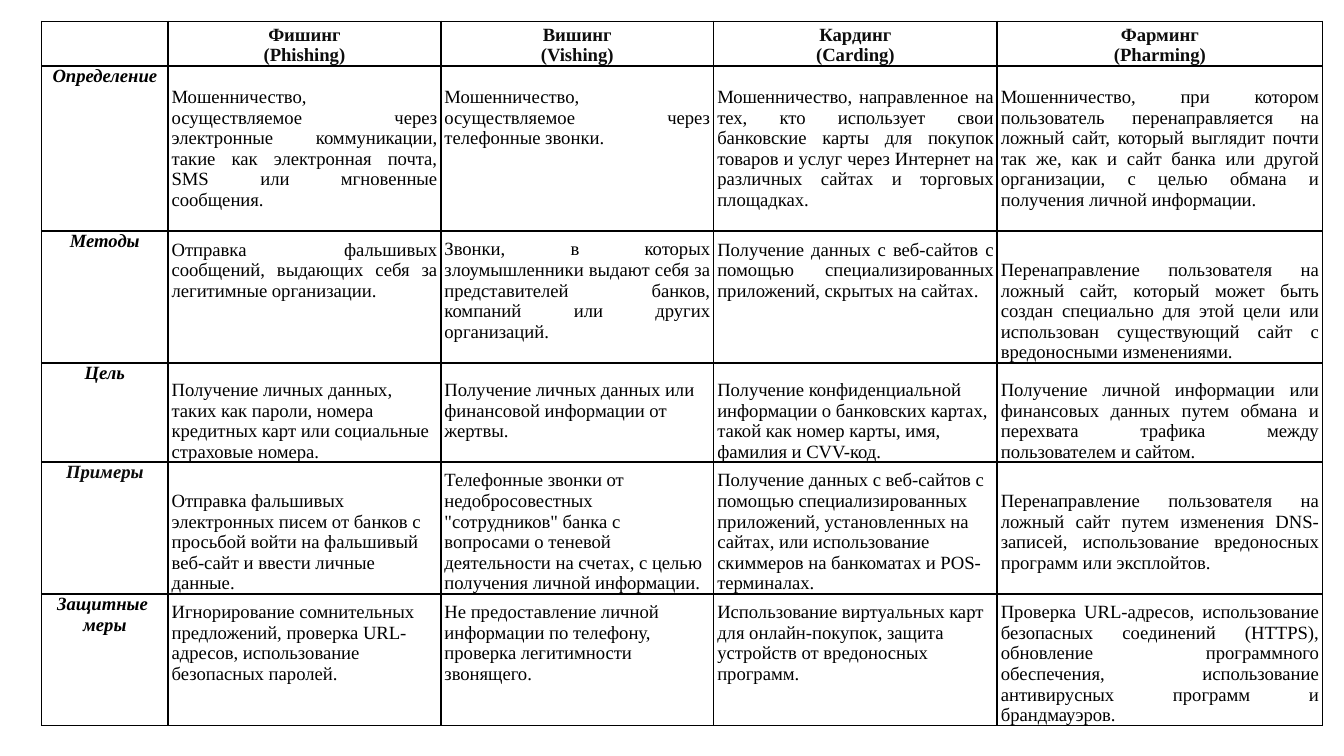
from lxml import etree
from pptx import Presentation
from pptx.dml.color import RGBColor
from pptx.enum.text import MSO_ANCHOR, PP_ALIGN
from pptx.oxml.ns import qn
from pptx.util import Inches, Pt

TOP, BOTTOM = MSO_ANCHOR.TOP, MSO_ANCHOR.BOTTOM
LEFT, CENTER, JUSTIFY = PP_ALIGN.LEFT, PP_ALIGN.CENTER, PP_ALIGN.JUSTIFY
BLACK = RGBColor(0x00, 0x00, 0x00)
DARK = RGBColor(0x0D, 0x0D, 0x0D)
FONT = "Times New Roman"
LINE = Pt(11)
SIDE_MARGIN = Pt(2)
COLS = [0.94, 2.03, 2.03, 2.11, 2.42]
ROWS = [0.33, 1.23, 0.98, 0.74, 0.98, 0.98]

HEADERS = ["Фишинг\n(Phishing)", "Вишинг\n(Vishing)",
           "Кардинг\n(Carding)", "Фарминг\n(Pharming)"]
LABELS = ["Определение", "Методы", "Цель", "Примеры", "Защитные \nмеры"]
BODY = [
    ["Мошенничество, осуществляемое через электронные коммуникации, такие как "
     "электронная почта, SMS или мгновенные сообщения.",
     "Мошенничество, осуществляемое через телефонные звонки.",
     "Мошенничество, направленное на тех, кто использует свои банковские карты для "
     "покупок товаров и услуг через Интернет на различных сайтах и торговых площадках.",
     "Мошенничество, при котором пользователь перенаправляется на ложный сайт, который "
     "выглядит почти так же, как и сайт банка или другой организации, с целью обмана и "
     "получения личной информации."],
    ["Отправка фальшивых сообщений, выдающих себя за легитимные организации.",
     "Звонки, в которых злоумышленники выдают себя за представителей банков, компаний "
     "или других организаций.",
     "Получение данных с веб-сайтов с помощью специализированных приложений, скрытых "
     "на сайтах.",
     "Перенаправление пользователя на ложный сайт, который может быть создан специально "
     "для этой цели или использован существующий сайт с вредоносными изменениями."],
    ["Получение личных данных, таких как пароли, номера кредитных карт или социальные "
     "страховые номера.",
     "Получение личных данных или финансовой информации от жертвы.",
     "Получение конфиденциальной информации о банковских картах, такой как номер карты, "
     "имя, фамилия и CVV-код.",
     "Получение личной информации или финансовых данных путем обмана и перехвата "
     "трафика между пользователем и сайтом."],
    ["Отправка фальшивых электронных писем от банков с просьбой войти на фальшивый "
     "веб-сайт и ввести личные данные.",
     "Телефонные звонки от недобросовестных \"сотрудников\" банка с вопросами о теневой "
     "деятельности на счетах, с целью получения личной информации.",
     "Получение данных с веб-сайтов с помощью специализированных приложений, "
     "установленных на сайтах, или использование скиммеров на банкоматах и "
     "POS-терминалах.",
     "Перенаправление пользователя на ложный сайт путем изменения DNS-записей, "
     "использование вредоносных программ или эксплойтов."],
    ["Игнорирование сомнительных предложений, проверка URL-адресов, использование "
     "безопасных паролей.",
     "Не предоставление личной информации по телефону, проверка легитимности звонящего.",
     "Использование виртуальных карт для онлайн-покупок, защита устройств от "
     "вредоносных программ.",
     "Проверка URL-адресов, использование безопасных соединений (HTTPS), обновление "
     "программного обеспечения, использование антивирусных программ и брандмауэров."],
]
LINES_BELOW = [[1, 4, 1, 1], [3, 1, 3, 0], [0, 1, 0, 0], [0, 0, 0, 1], [2, 2, 2, 0]]


def add_borders(cell):
    tcPr = cell._tc.get_or_add_tcPr()
    for i, side in enumerate(("a:lnL", "a:lnR", "a:lnT", "a:lnB")):
        ln = etree.Element(qn(side), w=str(Pt(1)))
        fill = etree.SubElement(ln, qn("a:solidFill"))
        etree.SubElement(fill, qn("a:srgbClr"), val=str(BLACK))
        tcPr.insert(i, ln)


def write_cell(cell, text, align, anchor, color=BLACK, bold=False, italic=False, below=0):
    cell.text = text
    cell.vertical_anchor = anchor
    cell.margin_bottom = below * LINE
    for p in cell.text_frame.paragraphs:
        p.alignment = align
        p.font.name = FONT
        p.font.size = Pt(10)
        p.font.bold = bold
        p.font.italic = italic
        p.font.color.rgb = color


def add_grid(s):
    frame = s.shapes.add_table(len(ROWS), len(COLS), Inches(0.31), Inches(0.16),
                               Inches(sum(COLS)), Inches(sum(ROWS)))
    table = frame.table
    table.first_row = table.horz_banding = False
    for column, width in zip(table.columns, COLS):
        column.width = Inches(width)
    for row, height in zip(table.rows, ROWS):
        row.height = Inches(height)
    for cell in table.iter_cells():
        cell.margin_left = cell.margin_right = SIDE_MARGIN
        cell.margin_top = cell.margin_bottom = 0
        cell.fill.background()
        add_borders(cell)
    return table


def main():
    prs = Presentation()
    prs.slide_width, prs.slide_height = Inches(10), Inches(10 * 9 / 16)
    s = prs.slides.add_slide(prs.slide_layouts[6])
    table = add_grid(s)
    for c, header in enumerate(HEADERS, 1):
        write_cell(table.cell(0, c), header, CENTER, BOTTOM, DARK, bold=True)
    for r, (label, texts, gaps) in enumerate(zip(LABELS, BODY, LINES_BELOW), 1):
        color = DARK if label == "Примеры" else BLACK
        write_cell(table.cell(r, 0), label, CENTER, TOP, color, bold=True, italic=True)
        for c, (text, below) in enumerate(zip(texts, gaps), 1):
            align = JUSTIFY if r <= 2 or c == len(texts) else LEFT
            write_cell(table.cell(r, c), text, align, BOTTOM, below=below)
    prs.save("out.pptx")


if __name__ == "__main__":
    main()
